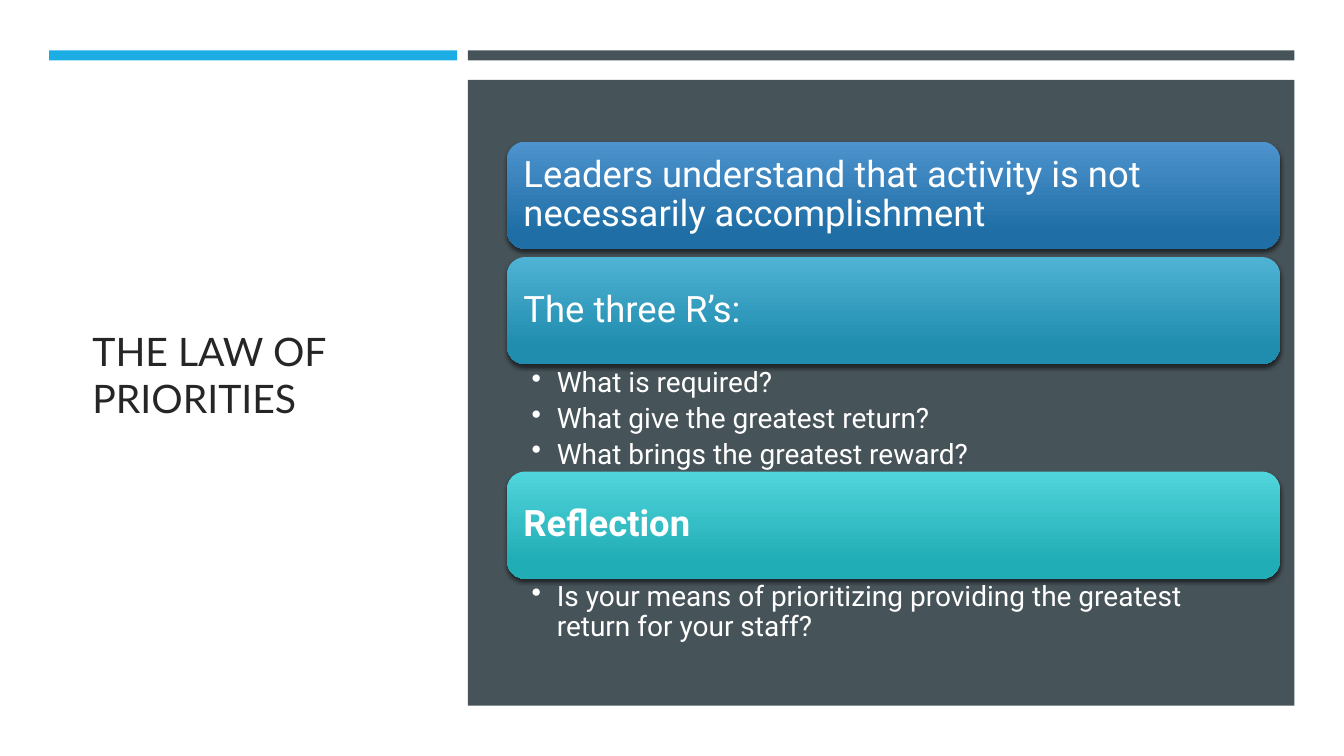
from dataclasses import dataclass

from lxml.etree import SubElement
from pptx import Presentation
from pptx.dml.color import RGBColor
from pptx.enum.shapes import MSO_SHAPE
from pptx.enum.text import MSO_ANCHOR, PP_ALIGN
from pptx.oxml.ns import qn
from pptx.util import Pt


@dataclass(frozen=True)
class Theme:
    white: str = "FFFFFF"
    ink: str = "262626"
    accent: str = "1CADE4"
    slate: str = "465359"
    blue: tuple = ("4D93CD", "206EA6")
    sky: tuple = ("4FB3D5", "208CAE")
    teal: tuple = ("51D5DC", "21ADB5")
    title_font: str = "Lato"
    body_font: str = "Roboto"
    title_size: int = 28
    heading_size: int = 26
    bullet_size: int = 20


THEME = Theme()

# Right-hand column shared by headings and bullet lists
COLUMN_LEFT, COLUMN_WIDTH = 362.2, 552
HEADING_HEIGHT = 76.5


def set_frame(frame, margins, anchor):
    frame.word_wrap = True
    frame.vertical_anchor = anchor
    left, top, right, bottom = margins
    frame.margin_left, frame.margin_top = Pt(left), Pt(top)
    frame.margin_right, frame.margin_bottom = Pt(right), Pt(bottom)


def format_text(paragraph, font_name, size, color, bold=False):
    paragraph.alignment = PP_ALIGN.LEFT
    for run in paragraph.runs:
        run.font.name = font_name
        run.font.size = Pt(size)
        run.font.bold = bold
        run.font.color.rgb = RGBColor.from_string(color)


def add_block(slide, left, top, width, height, color):
    block = slide.shapes.add_shape(
        MSO_SHAPE.RECTANGLE, Pt(left), Pt(top), Pt(width), Pt(height))
    block.shadow.inherit = False
    block.fill.solid()
    block.fill.fore_color.rgb = RGBColor.from_string(color)
    block.line.fill.background()


def add_title(slide, text):
    title = slide.shapes.add_textbox(Pt(59), Pt(82), Pt(240.5), Pt(371))
    set_frame(title.text_frame, (7.2, 3.6, 7.2, 3.6), MSO_ANCHOR.MIDDLE)
    title.text_frame.text = text
    format_text(title.text_frame.paragraphs[0], THEME.title_font,
                THEME.title_size, THEME.ink)


def add_soft_shadow(shape):
    shape.shadow.inherit = False
    effects = shape.element.spPr.find(qn("a:effectLst"))
    shadow = SubElement(effects, qn("a:outerShdw"), blurRad=str(Pt(3)),
                        dist=str(Pt(2)), dir="5400000", rotWithShape="0")
    black = SubElement(shadow, qn("a:srgbClr"), val="000000")
    SubElement(black, qn("a:alpha"), val="55000")


def add_heading(slide, top, text, colors, bold=False):
    heading = slide.shapes.add_shape(
        MSO_SHAPE.ROUNDED_RECTANGLE, Pt(COLUMN_LEFT), Pt(top),
        Pt(COLUMN_WIDTH), Pt(HEADING_HEIGHT))
    heading.line.fill.background()
    heading.fill.gradient()
    heading.fill.gradient_angle = 270
    for stop, position, color in zip(heading.fill.gradient_stops, (0, 0.84), colors):
        stop.position = position
        stop.color.rgb = RGBColor.from_string(color)
    add_soft_shadow(heading)

    set_frame(heading.text_frame, (8, 8, 8, 8), MSO_ANCHOR.MIDDLE)
    heading.text_frame.text = text
    paragraph = heading.text_frame.paragraphs[0]
    paragraph.line_spacing = 0.9
    format_text(paragraph, THEME.body_font, THEME.heading_size, THEME.white, bold)


def add_bullets(slide, top, height, lines):
    bullets = slide.shapes.add_textbox(
        Pt(COLUMN_LEFT), Pt(top), Pt(COLUMN_WIDTH), Pt(height))
    set_frame(bullets.text_frame, (17.5, 2.6, 14.2, 2.6), MSO_ANCHOR.TOP)
    bullets.text_frame.text = "\n".join(lines)
    for paragraph in bullets.text_frame.paragraphs:
        paragraph.line_spacing = 0.9
        paragraph.space_after = Pt(4)
        format_text(paragraph, THEME.body_font, THEME.bullet_size, THEME.white)
        properties = paragraph._p.get_or_add_pPr()
        properties.set("marL", str(Pt(18)))
        properties.set("indent", str(Pt(-18)))
        SubElement(properties, qn("a:buChar"), char="•")


def main():
    presentation = Presentation()
    presentation.slide_width, presentation.slide_height = Pt(960), Pt(540)
    slide = presentation.slides.add_slide(presentation.slide_layouts[6])
    slide.background.fill.solid()
    slide.background.fill.fore_color.rgb = RGBColor.from_string(THEME.white)

    # Title side
    add_title(slide, "THE LAW OF PRIORITIES")
    add_block(slide, 35, 36, 291.6, 7.2, THEME.accent)

    # Content panel
    add_block(slide, 334.2, 36, 590.4, 7.2, THEME.slate)
    add_block(slide, 334.2, 57, 590.4, 447, THEME.slate)

    # Headings with their bullet lists
    add_heading(slide, 101.2, "Leaders understand that activity is not "
                "necessarily accomplishment", THEME.blue)
    add_heading(slide, 183.6, "The three R’s:", THEME.sky)
    add_bullets(slide, 260.4, 76.5, [
        "What is required?",
        "What give the greatest return?",
        "What brings the greatest reward?",
    ])
    add_heading(slide, 336.8, "Reflection", THEME.teal, bold=True)
    add_bullets(slide, 413.4, 47, [
        "Is your means of prioritizing providing the greatest "
        "return for your staff?",
    ])

    presentation.save("out.pptx")


if __name__ == "__main__":
    main()
